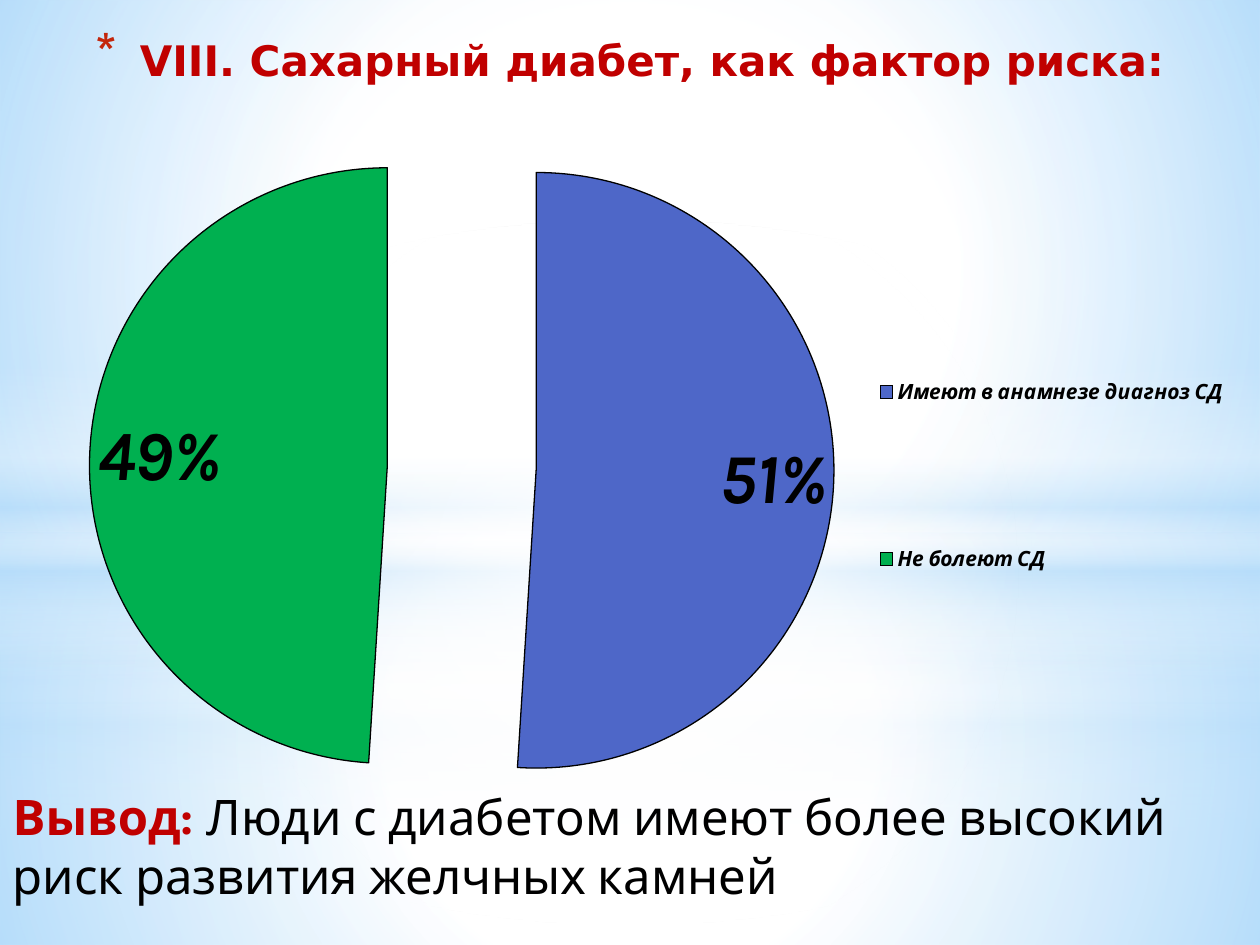
from lxml import etree
from pptx import Presentation
from pptx.chart.data import CategoryChartData
from pptx.dml.color import RGBColor
from pptx.enum.chart import XL_CHART_TYPE as ChartType
from pptx.enum.chart import XL_LABEL_POSITION as LabelPosition
from pptx.enum.chart import XL_LEGEND_POSITION as LegendPosition
from pptx.enum.shapes import MSO_SHAPE as Shape
from pptx.enum.text import MSO_ANCHOR, MSO_AUTO_SIZE, PP_ALIGN
from pptx.oxml import parse_xml
from pptx.oxml.ns import nsdecls, qn
from pptx.util import Inches, Pt

TITLE = "VIII. Сахарный диабет, как фактор риска:"
CONCLUSION = [("Вывод: ", "C00000", True),
              ("Люди с диабетом имеют более высокий риск развития желчных камней",
               "000000", False)]
SLICES = [("Имеют в анамнезе диагноз СД", 0.51, "4E67C8"),
          ("Не болеют СД", 0.49, "00B050")]
TITLE_BOX = (0, 0.52, 10, 0.94)
CONCLUSION_BOX = (0, 6.19, 10, 1.07)
CHART_BOX = (0, 0.76, 10, 5.91)
PLOT_SHARES = (0.057, 0, 0.619, 1)
LEGEND_SHARES = (0.68, 0.19, 0.31, 0.64)

WHITE, SKY = "FFFFFF", "B4DCFA"
RADIAL = '<a:path path="circle"><a:fillToRect l="50000" t="50000" r="50000" b="50000"/></a:path>'
DOWNWARD = '<a:lin ang="5400000" scaled="0"/>'
BAND = [(0, WHITE, 0), (29, WHITE, 30), (45, SKY, 40),
        (55, WHITE, 26), (65, SKY, 60), (100, WHITE, 0)]


def backdrop_layer(horizon, band_top, extra, glow_end):
    """Floor, sky, horizon band and glow; extra is added opacity in percent."""
    floor = [(0, WHITE, 91 + extra), (37, WHITE, 76 + extra), (100, SKY, 79 + extra)]
    sky = [(0, WHITE, 89 + extra), (48, WHITE, 62 + extra), (100, SKY, 79 + extra)]
    glow = [(0, WHITE, 100), (glow_end, WHITE, 0)]
    return [(Shape.RECTANGLE, (0, horizon, 10, 7.5 - horizon), floor, RADIAL),
            (Shape.RECTANGLE, (0, 0, 10, horizon), sky, RADIAL),
            (Shape.RECTANGLE, (0, band_top, 10, 2.5), BAND, DOWNWARD),
            (Shape.OVAL, (0, 1.75, 10, 5.58), glow, RADIAL)]


BACKDROP = backdrop_layer(5.58, 4.12, 0, 56) + backdrop_layer(4.23, 2.9, 1, 54)


def color(hex_value):
    return RGBColor.from_string(hex_value)


def inches(box):
    return [Inches(value) for value in box]


def add_gradient_shape(slide, kind, box, stops, direction):
    shape = slide.shapes.add_shape(kind, *inches(box))
    shape.shadow.inherit = False
    shape.line.fill.background()
    stop_xml = "".join(
        f'<a:gs pos="{position * 1000}"><a:srgbClr val="{hex_value}">'
        f'<a:alpha val="{opacity * 1000}"/></a:srgbClr></a:gs>'
        for position, hex_value, opacity in stops)
    gradient = parse_xml(f'<a:gradFill {nsdecls("a")} rotWithShape="1">'
                         f'<a:gsLst>{stop_xml}</a:gsLst>{direction}</a:gradFill>')
    shape._element.spPr.find(qn("a:prstGeom")).addnext(gradient)


def place(placeholder, box):
    placeholder.left, placeholder.top, placeholder.width, placeholder.height = inches(box)
    placeholder.text_frame.auto_size = MSO_AUTO_SIZE.NONE
    return placeholder.text_frame.paragraphs[0]


def set_bullet(paragraph, indent, *elements):
    properties = paragraph._p.get_or_add_pPr()
    properties.set("marL", str(Inches(indent)))
    properties.set("indent", str(-Inches(indent)))
    for xml in elements:
        properties.append(parse_xml(xml.replace("/>", f' {nsdecls("a")}/>', 1)
                                    if xml.endswith("/>") else xml))


def add_run(paragraph, text, size, font_name, hex_value, bold):
    run = paragraph.add_run()
    run.text = text
    run.font.size, run.font.name, run.font.bold = Pt(size), font_name, bold
    run.font.color.rgb = color(hex_value)


def manual_layout(shares, inner=False):
    target = '<c:layoutTarget val="inner"/>' if inner else ""
    modes = "".join(f'<c:{axis}Mode val="edge"/>' for axis in "xy")
    sizes = "".join(f'<c:{name} val="{share}"/>' for name, share in zip("xywh", shares))
    return parse_xml(f'<c:layout {nsdecls("c")}><c:manualLayout>{target}{modes}{sizes}'
                     '</c:manualLayout></c:layout>')


def add_pie(slide):
    data = CategoryChartData(number_format="0%")
    data.categories = [name for name, _, _ in SLICES]
    data.add_series("Series 1", [value for _, value, _ in SLICES])
    chart = slide.shapes.add_chart(ChartType.PIE, *inches(CHART_BOX), data).chart
    chart.has_title = False
    chart.font.size, chart.font.name = Pt(10), "Karla"
    chart.font.color.rgb = color("000000")

    plot = chart.plots[0]
    plot.vary_by_categories = True
    series = plot.series[0]
    for index, (_, _, hex_value) in enumerate(SLICES):
        slice_format = series.points[index].format
        slice_format.fill.solid()
        slice_format.fill.fore_color.rgb = color(hex_value)
        slice_format.line.color.rgb = color("000000")
        slice_format.line.width = Pt(0.75)
    series.format.line.color.rgb = color("000000")
    explosion = parse_xml(f'<c:explosion {nsdecls("c")} val="25"/>')
    series._element.find(qn("c:spPr")).addnext(explosion)

    labels = series.data_labels
    labels.show_value = True
    labels.number_format, labels.number_format_is_linked = "0%", False
    labels.position = LabelPosition.INSIDE_END
    chart.has_legend = True
    legend = chart.legend
    legend.position = LegendPosition.RIGHT
    legend.include_in_layout = False
    for font, size in ((labels.font, 40), (legend.font, 12)):
        font.size, font.name = Pt(size), "Karla"
        font.bold = font.italic = True
        font.color.rgb = color("000000")

    plot_area = chart._chartSpace.chart.plotArea
    for layout in plot_area.findall(qn("c:layout")):
        plot_area.remove(layout)
    plot_area.insert(0, manual_layout(PLOT_SHARES, inner=True))
    legend_element = legend._element
    for layout in legend_element.findall(qn("c:layout")):
        legend_element.remove(layout)
    legend_element.find(qn("c:legendPos")).addnext(manual_layout(LEGEND_SHARES))


def main():
    presentation = Presentation()
    presentation.slide_width, presentation.slide_height = Inches(10), Inches(7.5)
    slide = presentation.slides.add_slide(presentation.slide_layouts[1])
    title, body = slide.placeholders
    for layer in BACKDROP:
        add_gradient_shape(slide, *layer)
    for placeholder in (title, body):
        slide.shapes._spTree.append(placeholder._element)

    paragraph = place(title, TITLE_BOX)
    title.text_frame.vertical_anchor = MSO_ANCHOR.BOTTOM
    set_bullet(paragraph, 0.35, '<a:buClr %s><a:srgbClr val="C3260C"/></a:buClr>' % nsdecls("a"),
               '<a:buSzPct val="128000"/>', '<a:buChar char="*"/>')
    paragraph.alignment = PP_ALIGN.CENTER
    add_run(paragraph, TITLE, 24, "DejaVu Sans", "C00000", True)
    paragraph.add_line_break()

    paragraph = place(body, CONCLUSION_BOX)
    set_bullet(paragraph, 0, "<a:buNone/>")
    paragraph.space_before, paragraph.space_after = Pt(0), Pt(3)
    for text, hex_value, bold in CONCLUSION:
        add_run(paragraph, text, 28, "Karla", hex_value, bold)

    add_pie(slide)
    presentation.save("out.pptx")


if __name__ == "__main__":
    main()
